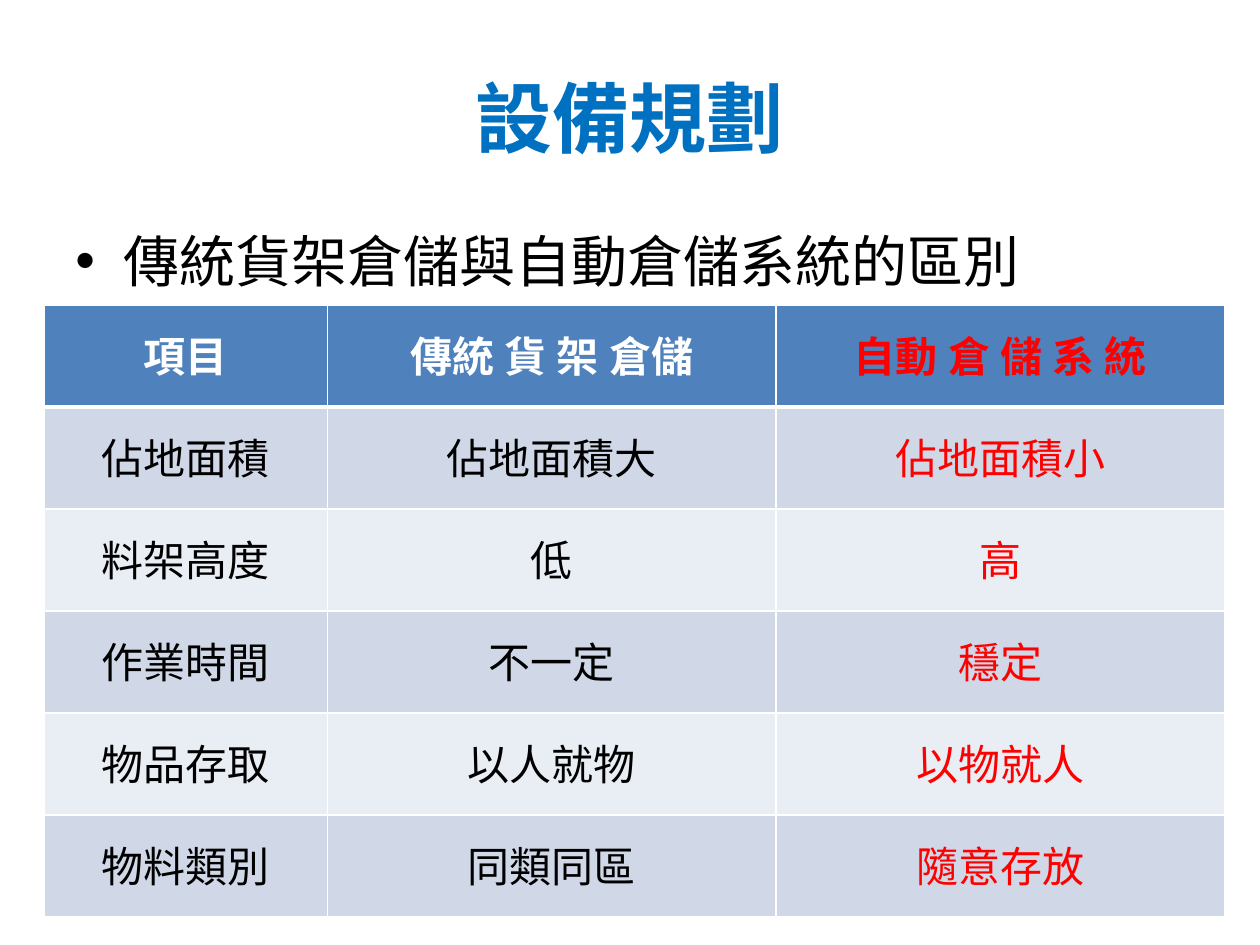
from dataclasses import dataclass

from lxml.etree import SubElement
from pptx import Presentation
from pptx.dml.color import RGBColor
from pptx.enum.text import MSO_ANCHOR, PP_ALIGN
from pptx.oxml.ns import qn
from pptx.util import Inches, Pt

FONT = "Roboto Slab"
BLUE = RGBColor(0x00, 0x70, 0xC0)
BLACK = RGBColor(0x00, 0x00, 0x00)
WHITE = RGBColor(0xFF, 0xFF, 0xFF)
RED = RGBColor(0xFF, 0x00, 0x00)
HEAD = RGBColor(0x4F, 0x81, 0xBD)
BANDS = (RGBColor(0xD0, 0xD8, 0xE8), RGBColor(0xE9, 0xED, 0xF4))

LEFT, TOP = 0.35, 2.42
COLS = (2.25, 3.56, 3.56)
ROW = 0.81


@dataclass
class Row:
    item: str
    shelf: str
    auto: str


ROWS = [
    Row("項目", "傳統 貨 架 倉儲", "自動 倉 儲 系 統"),
    Row("佔地面積", "佔地面積大", "佔地面積小"),
    Row("料架高度", "低", "高"),
    Row("作業時間", "不一定", "穩定"),
    Row("物品存取", "以人就物", "以物就人"),
    Row("物料類別", "同類同區", "隨意存放"),
]


def write(frame, text: str, *, size: int, color: RGBColor, bold: bool = False,
          align: PP_ALIGN = PP_ALIGN.CENTER, bullet: str = "") -> None:
    """Put one formatted paragraph in a text frame."""
    para = frame.paragraphs[0]
    para.alignment = align
    if bullet:
        props = para._p.get_or_add_pPr()
        props.set("marL", str(Inches(0.38)))
        props.set("indent", str(-Inches(0.38)))
        SubElement(props, qn("a:buFont")).set("typeface", "Arial")
        SubElement(props, qn("a:buChar")).set("char", bullet)
    run = para.add_run()
    run.text = text
    font = run.font
    font.name, font.size, font.bold = FONT, Pt(size), bold
    font.color.rgb = color
    props = run._r.get_or_add_rPr()
    props.set("lang", "zh-TW")
    SubElement(props, qn("a:ea")).set("typeface", FONT)


def add_box(slide, left: float, top: float, width: float, height: float,
            anchor: MSO_ANCHOR):
    """Add a wrapping text box and return its text frame."""
    box = slide.shapes.add_textbox(Inches(left), Inches(top),
                                   Inches(width), Inches(height))
    box.text_frame.word_wrap = True
    box.text_frame.vertical_anchor = anchor
    return box.text_frame


def rule(cell, side: str, width: int) -> None:
    """Draw one white border of a cell."""
    line = SubElement(cell._tc.get_or_add_tcPr(), qn(f"a:ln{side}"))
    line.set("w", str(Pt(width)))
    fill = SubElement(line, qn("a:solidFill"))
    SubElement(fill, qn("a:srgbClr")).set("val", str(WHITE))


def add_grid(slide, rows: list[Row]) -> None:
    """Draw the table that compares the two kinds of store."""
    grid = slide.shapes.add_table(
        len(rows), len(COLS), Inches(LEFT), Inches(TOP),
        Inches(sum(COLS)), Inches(ROW * len(rows))).table
    for col, width in zip(grid.columns, COLS):
        col.width = Inches(width)
    for i, row in enumerate(rows):
        grid.rows[i].height = Inches(ROW)
        head = i == 0
        plain = WHITE if head else BLACK
        cells = zip((row.item, row.shelf, row.auto), (plain, plain, RED))
        for j, (text, color) in enumerate(cells):
            cell = grid.cell(i, j)
            # Borders come before the fill; a thick rule ends the header
            for side in "LRTB":
                thick = (side == "B" and head) or (side == "T" and i == 1)
                rule(cell, side, 3 if thick else 1)
            cell.fill.solid()
            cell.fill.fore_color.rgb = HEAD if head else BANDS[(i - 1) % 2]
            cell.vertical_anchor = MSO_ANCHOR.MIDDLE
            write(cell.text_frame, text, size=24, color=color, bold=head)


def main() -> None:
    deck = Presentation()
    deck.slide_width, deck.slide_height = Inches(10), Inches(7.5)
    slide = deck.slides.add_slide(deck.slide_layouts[6])

    # Title
    title = add_box(slide, 0.5, 0.3, 9, 1.25, MSO_ANCHOR.MIDDLE)
    write(title, "設備規劃", size=44, color=BLUE, bold=True)

    # Lead line
    lead = add_box(slide, 0.5, 1.75, 9, 4.95, MSO_ANCHOR.TOP)
    write(lead, "傳統貨架倉儲與自動倉儲系統的區別", size=32, color=BLACK,
          align=PP_ALIGN.LEFT, bullet="•")

    # Comparison table
    add_grid(slide, ROWS)
    deck.save("out.pptx")


if __name__ == "__main__":
    main()
